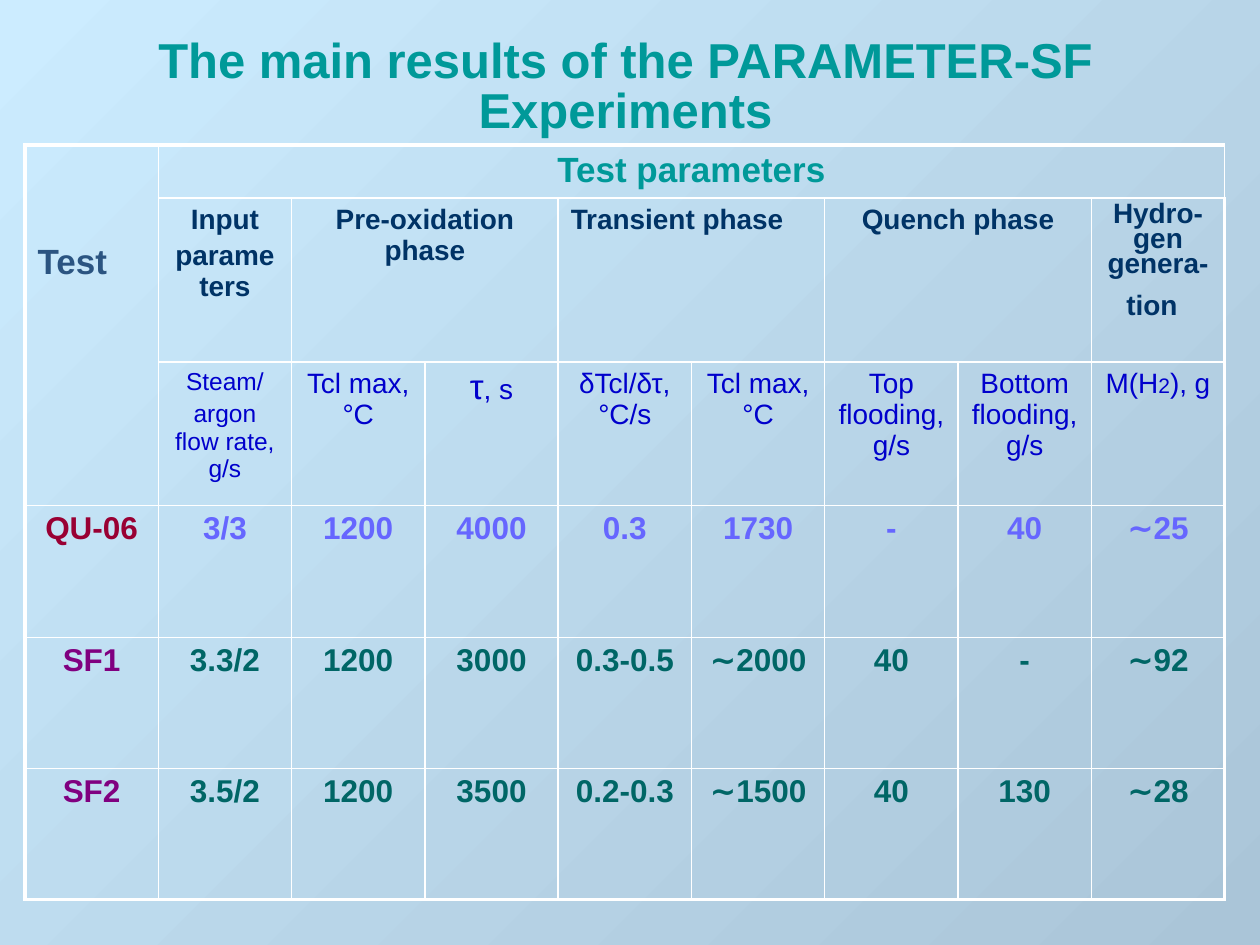
from dataclasses import dataclass

from lxml import etree
from pptx import Presentation
from pptx.dml.color import RGBColor
from pptx.enum.text import MSO_ANCHOR, MSO_AUTO_SIZE, PP_ALIGN
from pptx.oxml.ns import qn
from pptx.util import Pt

LEFT, CENTER = PP_ALIGN.LEFT, PP_ALIGN.CENTER
MIDDLE, NO_AUTOFIT = MSO_ANCHOR.MIDDLE, MSO_AUTO_SIZE.NONE
EMU_PER_PX = 914400 / 126
TEAL, NAVY, BLUE, WHITE = "009999", "003366", "0000CC", "FFFFFF"
VIOLET, GREEN, CRIMSON, PURPLE = "6666FF", "006666", "990033", "800080"
TABLE_LEFT, TABLE_TOP, TABLE_WIDTH = 25, 145, 1200
ROW_HEIGHTS = (53, 164, 143, 132, 131, 131)
COLUMN_COUNT = 9
THIN, THICK = 1, 2.25


@dataclass(frozen=True)
class Style:
    size: int
    color: str
    bold: bool = True
    font: str = "Arial"


@dataclass(frozen=True)
class Entry:
    row: int
    column: int
    paragraphs: tuple
    style: Style
    row_span: int = 1
    column_span: int = 1
    align: PP_ALIGN = CENTER
    line_spacing: float = 1.0
    top_margin: int = 6


@dataclass(frozen=True)
class Result:
    test: str
    test_color: str
    value_color: str
    values: tuple


PHASE = Style(16, NAVY)
QUANTITY = Style(16, BLUE, False)
SMALL = Style(14, BLUE, False)

HEADINGS = (
    Entry(0, 0, ("Test",), Style(20, "2B5481"), row_span=3, align=LEFT, top_margin=98),
    Entry(0, 1, ("Test parameters",), Style(20, TEAL), column_span=8),
    Entry(1, 1, ("Input", "parameters"), PHASE),
    Entry(1, 2, ("Pre-oxidation phase",), PHASE, column_span=2),
    Entry(1, 4, ("Transient phase",), PHASE, column_span=2, align=LEFT),
    Entry(1, 6, ("Quench phase",), PHASE, column_span=2),
    Entry(1, 8, ((("Hydro-gen genera-tion", PHASE),
                  (" ", Style(28, WHITE, font="Roboto"))),), PHASE, line_spacing=0.8),
    Entry(2, 1, ("Steam/", "argon flow rate, g/s"), SMALL),
    Entry(2, 2, ("Tcl max, °C",), QUANTITY),
    Entry(2, 3, ((("τ", Style(20, BLUE, False)), (", s", QUANTITY)),), QUANTITY),
    Entry(2, 4, ("δTcl/δτ, °C/s",), QUANTITY),
    Entry(2, 5, ("Tcl max, °C",), QUANTITY),
    Entry(2, 6, ("Top flooding, g/s",), QUANTITY),
    Entry(2, 7, ("Bottom flooding, g/s",), QUANTITY),
    Entry(2, 8, ((("M(H", QUANTITY), ("2", Style(12, BLUE, False)),
                  ("), g", QUANTITY)),), QUANTITY),
)
RESULTS = (
    Result("QU-06", CRIMSON, VIOLET,
           ("3/3", "1200", "4000", "0.3", "1730", "-", "40", "∼25")),
    Result("SF1", PURPLE, GREEN,
           ("3.3/2", "1200", "3000", "0.3-0.5", "∼2000", "40", "-", "∼92")),
    Result("SF2", PURPLE, GREEN,
           ("3.5/2", "1200", "3500", "0.2-0.3", "∼1500", "40", "130", "∼28")),
)


def px(length: int) -> int:
    return round(length * EMU_PER_PX)


def rgb(color: str) -> RGBColor:
    return RGBColor.from_string(color)


def add_run(paragraph, text: str, style: Style) -> None:
    run = paragraph.add_run()
    run.text = text
    run.font.name = style.font
    run.font.size = Pt(style.size)
    run.font.bold = style.bold
    run.font.color.rgb = rgb(style.color)


def add_border(cell, side: str, width: float) -> None:
    line = etree.SubElement(cell._tc.get_or_add_tcPr(), qn(f"a:ln{side}"), w=str(Pt(width)))
    fill = etree.SubElement(line, qn("a:solidFill"))
    etree.SubElement(fill, qn("a:srgbClr"), val=WHITE)


def format_grid(table) -> None:
    last_row, last_column = len(ROW_HEIGHTS) - 1, COLUMN_COUNT - 1
    for row in range(last_row + 1):
        for column in range(last_column + 1):
            cell = table.cell(row, column)
            add_border(cell, "L", THICK if column == 0 else THIN)
            add_border(cell, "R", THICK if column == last_column else THIN)
            add_border(cell, "T", THICK if row == 0 else THIN)
            add_border(cell, "B", THICK if row == last_row else THIN)
            cell.fill.background()


def write_entry(table, entry: Entry) -> None:
    cell = table.cell(entry.row, entry.column)
    if entry.row_span * entry.column_span > 1:
        cell.merge(table.cell(entry.row + entry.row_span - 1,
                              entry.column + entry.column_span - 1))
    cell.margin_top = px(entry.top_margin)
    frame = cell.text_frame
    for index, content in enumerate(entry.paragraphs):
        paragraph = frame.add_paragraph() if index else frame.paragraphs[0]
        paragraph.alignment = entry.align
        paragraph.line_spacing = entry.line_spacing
        paragraph.space_before = Pt(entry.style.size * 0.2)
        runs = ((content, entry.style),) if isinstance(content, str) else content
        for text, style in runs:
            add_run(paragraph, text, style)


def add_results_table(slide) -> None:
    table = slide.shapes.add_table(
        len(ROW_HEIGHTS), COLUMN_COUNT, px(TABLE_LEFT), px(TABLE_TOP),
        px(TABLE_WIDTH), px(sum(ROW_HEIGHTS))).table
    table.first_row = False
    table.horz_banding = False
    for column in table.columns:
        column.width = px(TABLE_WIDTH) // COLUMN_COUNT
    for row, height in zip(table.rows, ROW_HEIGHTS):
        row.height = px(height)
    format_grid(table)
    for heading in HEADINGS:
        write_entry(table, heading)
    for row, result in enumerate(RESULTS, start=3):
        write_entry(table, Entry(row, 0, (result.test,), Style(18, result.test_color)))
        for column, value in enumerate(result.values, start=1):
            write_entry(table, Entry(row, column, (value,), Style(18, result.value_color)))


def write_title(slide) -> None:
    title = slide.shapes.title
    title.left, title.top, title.width, title.height = map(px, (15, 32, 1221, 113))
    frame = title.text_frame
    frame.word_wrap = True
    frame.auto_size = NO_AUTOFIT
    frame.vertical_anchor = MIDDLE
    paragraph = frame.paragraphs[0]
    paragraph.alignment = CENTER
    paragraph.line_spacing = 0.85
    add_run(paragraph, "The main results of the PARAMETER-SF Experiments", Style(28, TEAL))


def paint_background(slide) -> None:
    fill = slide.background.fill
    fill.gradient()
    fill.gradient_angle = 315
    for stop, color in zip(fill.gradient_stops, ("CCECFF", "AAC5D8")):
        stop.color.rgb = rgb(color)


def main() -> None:
    """Build the slide of experiment results and save it."""
    presentation = Presentation()
    presentation.slide_width, presentation.slide_height = px(1260), px(945)
    slide = presentation.slides.add_slide(presentation.slide_layouts[5])
    paint_background(slide)
    add_results_table(slide)
    write_title(slide)
    presentation.save("out.pptx")


if __name__ == "__main__":
    main()
